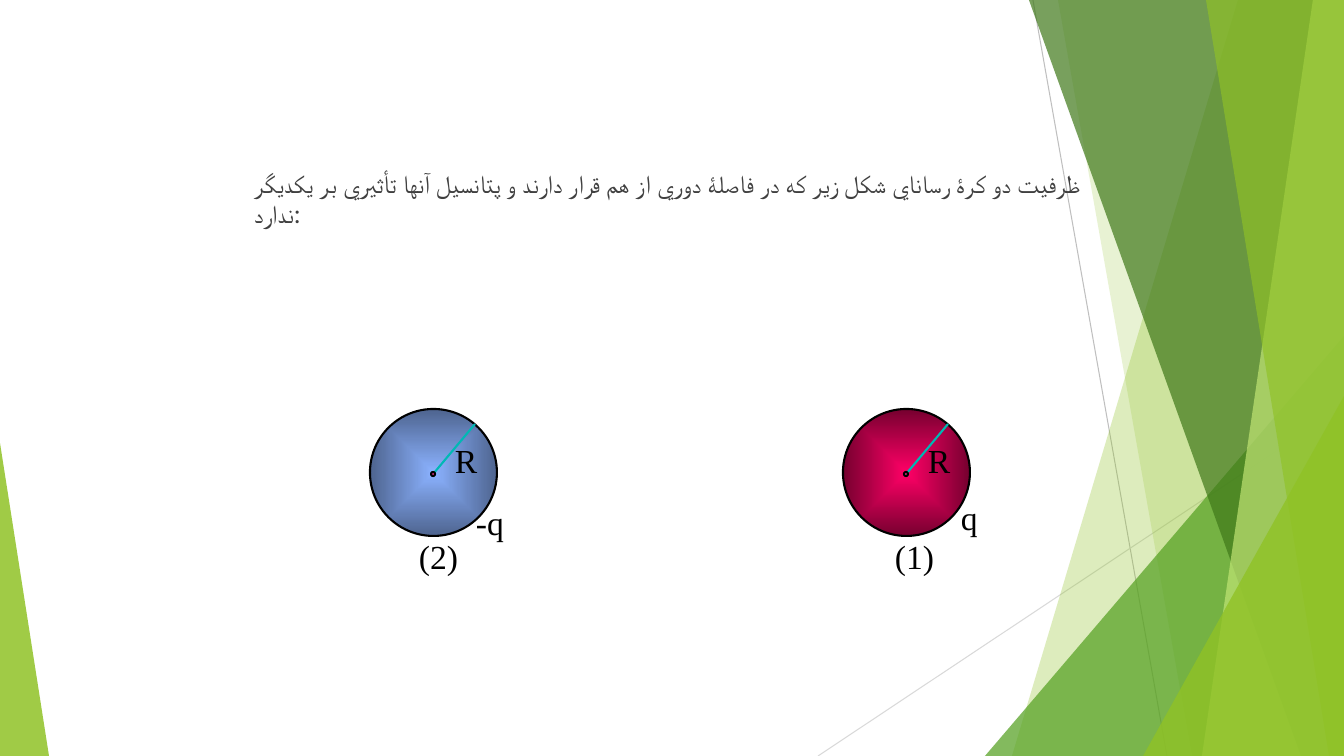
from lxml import etree
from pptx import Presentation
from pptx import util as u
from pptx.dml.color import RGBColor
from pptx.enum import shapes, text
from pptx.oxml.ns import qn

PX = 12700 * 5 / 7  # EMU per px, at 100.8 px to the inch
WIDTH, HEIGHT = 1344, 756


def px(*lengths):
    return [u.Emu(round(length * PX)) for length in lengths]


def color(hex_string):
    return RGBColor.from_string(hex_string)


deck = Presentation()
deck.slide_width, deck.slide_height = px(WIDTH, HEIGHT)
page = deck.slides.add_slide(deck.slide_layouts[6])

# Lines as (canvas, ends, colour, width); the radii are added with the spheres
lines = [(page.shapes, (1033, 0, 1167, HEIGHT), "BFBFBF", 0.75),
         (page.shapes, (WIDTH, 406, 818, HEIGHT), "D9D9D9", 0.75)]
for canvas, ends, line_color, width in lines:
    line = canvas.add_connector(shapes.MSO_CONNECTOR.STRAIGHT, *px(*ends))
    line.line.color.rgb = color(line_color)
    line.line.width = u.Pt(width)
    etree.SubElement(line._element.spPr, qn("a:effectLst"))

# Bands reach the right edge: (top left x, bottom left x)
# Triangles: (left, top, width, height, apex position)
facets = [
    ((1238, 1012), "90C226", 30),
    ((1058, 1192), "90C226", 20),
    ((985, 336, 359, 420, 1), "54A021", 72),
    ((1029, 1301), "3F7819", 70),
    ((1313, 1202), "C0E474", 70),
    ((1206, 1329), "90C226", 65),
    ((1143, 396, 201, 360, 1), "90C226", 80),
    ((0, 443, 49, 313, 0), "90C226", 85),
]
for outline, fill_color, opacity in facets:
    if len(outline) == 2:
        top_x, bottom_x = outline
        builder = page.shapes.build_freeform(top_x, 0, scale=PX)
        builder.add_line_segments([(WIDTH, 0), (WIDTH, HEIGHT), (bottom_x, HEIGHT)])
        facet = builder.convert_to_shape()
    else:
        *frame, apex = outline
        facet = page.shapes.add_shape(shapes.MSO_SHAPE.ISOSCELES_TRIANGLE, *px(*frame))
        facet.adjustments[0] = apex
    facet.shadow.inherit = False
    facet.fill.solid()
    facet.fill.fore_color.rgb = color(fill_color)
    facet.line.fill.background()
    tint = facet._element.spPr.find(qn("a:solidFill"))[0]
    etree.SubElement(tint, qn("a:alpha"), val=str(opacity * 1000))

question = page.shapes.add_textbox(*px(244, 163, 857, 132))
question.text_frame.word_wrap = True
para = question.text_frame.paragraphs[0]
para.text = "ظرفيت دو كرۀ رساناي شكل زير كه در فاصلۀ دوري از هم قرار دارند و پتانسيل آنها تأثيري بر يكديگر ندارد:"
para.space_before = u.Pt(10)
span = para.runs[0]
span.font.name = "Lato"
span.font.size = u.Pt(18)
span.font.color.rgb = color("404040")

# Sphere left, centre colour, rim colour, labels as (text, left, top, width)
spheres = [
    (843, "FF0066", "76002F",
     [("R", 918, 435, 42), ("q", 951, 492, 37), ("(1)", 885, 531, 60)]),
    (370, "8BB2FF", "4E648F",
     [("R", 445, 435, 42), ("-q", 466, 497, 48), ("(2)", 409, 531, 60)]),
]
for left, center_color, rim_color, labels in spheres:
    group = page.shapes.add_group_shape().shapes
    sphere = group.add_shape(shapes.MSO_SHAPE.OVAL, *px(left, 409, 127, 127))
    sphere.fill.gradient()
    for stop, stop_color in zip(sphere.fill.gradient_stops, (center_color, rim_color)):
        stop.color.rgb = color(stop_color)
    gradient = sphere._element.spPr.find(qn("a:gradFill"))
    gradient.remove(gradient.find(qn("a:lin")))
    shade = etree.SubElement(gradient, qn("a:path"))
    shade.set("path", "shape")
    etree.SubElement(shade, qn("a:fillToRect"), {side: "50000" for side in "ltrb"})

    radius = group.add_connector(shapes.MSO_CONNECTOR.STRAIGHT,
                                 *px(left + 64, 473, left + 105, 424))
    radius.line.color.rgb = color("00B8B4")
    radius.line.width = u.Pt(1.5)
    etree.SubElement(radius._element.spPr, qn("a:effectLst"))

    center = group.add_shape(shapes.MSO_SHAPE.OVAL, *px(left + 61, 472, 4, 4))
    center.fill.solid()
    center.fill.fore_color.rgb = color("FF3399")
    for disc in (sphere, center):
        disc.shadow.inherit = False
        disc.line.color.rgb = color("000000")
        disc.line.width = u.Pt(1.5)

    for label, label_left, top, width in labels:
        box = group.add_textbox(*px(label_left, top, width, 50))
        box.text_frame.word_wrap = False
        box.text_frame.auto_size = text.MSO_AUTO_SIZE.SHAPE_TO_FIT_TEXT
        para = box.text_frame.paragraphs[0]
        para.text = label
        span = para.runs[0]
        span.font.name = "Times New Roman"
        span.font.size = u.Pt(24)
        span.font.color.rgb = color("000000")

deck.save("out.pptx")
